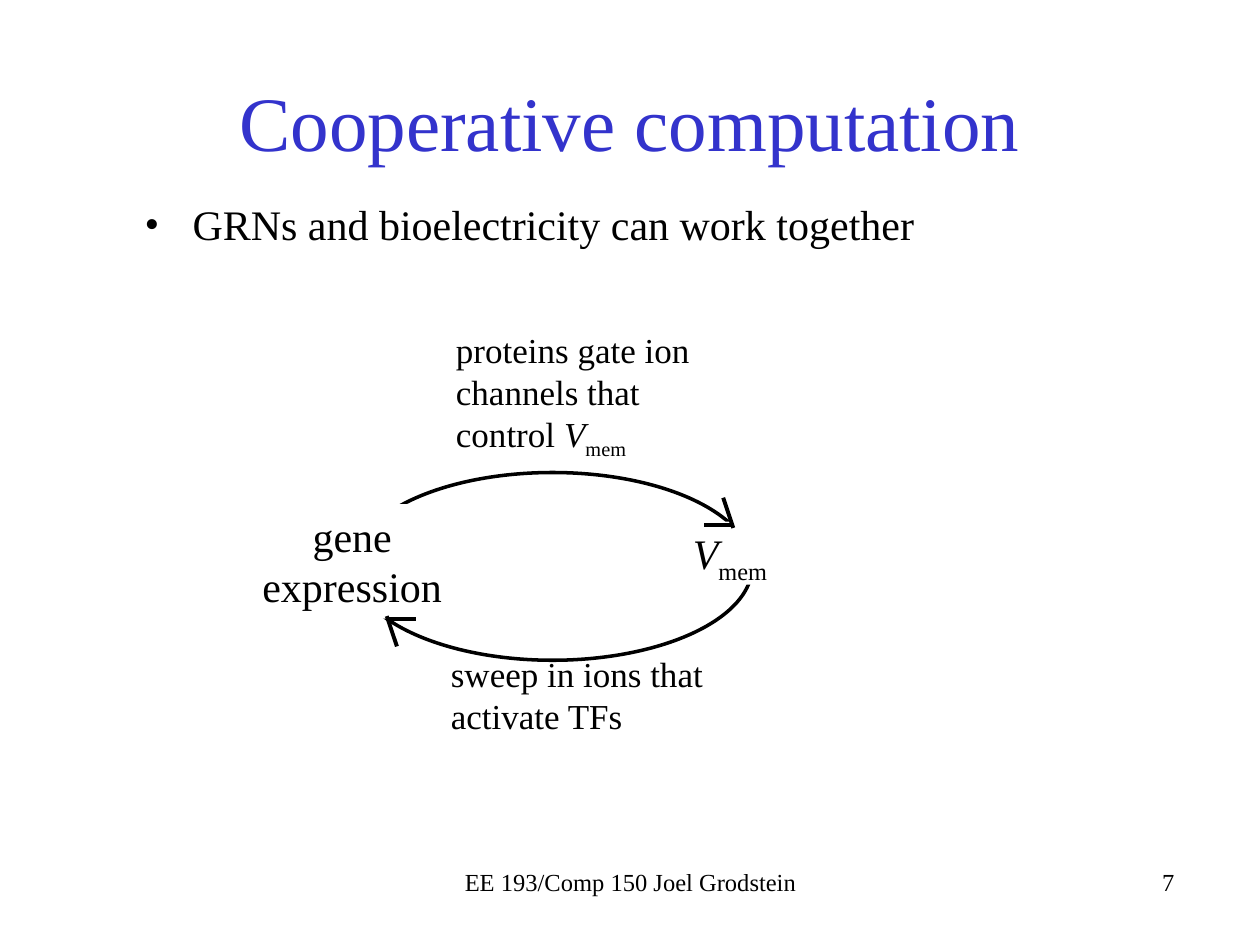
from lxml.etree import SubElement
from pptx import Presentation
from pptx.dml.color import RGBColor
from pptx.enum.shapes import MSO_CONNECTOR, MSO_SHAPE
from pptx.enum.text import MSO_ANCHOR, PP_ALIGN
from pptx.oxml.ns import qn
from pptx.util import Inches, Pt

FONT = "Times New Roman"
COLORS = {"ink": "000000", "title": "3333CC", "paper": "FFFFFF"}
VMEM = [("V", "italic"), ("mem", "sub")]


def color(name):
    return RGBColor.from_string(COLORS[name])


def add_text(slide, box, runs, size=24, ink="ink", align=PP_ALIGN.LEFT,
             anchor=MSO_ANCHOR.TOP, fill=None, bullet=False):
    """Add text given as a string or as (text, style) runs; fill makes it a rectangle."""
    place = [Inches(n) for n in box]
    if fill:
        shape = slide.shapes.add_shape(MSO_SHAPE.RECTANGLE, *place)
        shape.shadow.inherit = False
        shape.fill.solid()
        shape.fill.fore_color.rgb = color(fill)
        shape.line.fill.background()
    else:
        shape = slide.shapes.add_textbox(*place)
    frame = shape.text_frame
    frame.word_wrap = True
    frame.vertical_anchor = anchor
    para = frame.paragraphs[0]
    para.alignment = align
    if bullet:
        props = para._p.get_or_add_pPr()
        props.set("marL", str(Inches(0.38)))
        props.set("indent", str(Inches(-0.38)))
        SubElement(props, qn("a:buFont"), typeface=FONT)
        SubElement(props, qn("a:buChar"), char="•")
    for text, style in [(runs, None)] if isinstance(runs, str) else runs:
        run = para.add_run()
        run.text = text
        run.font.name = FONT
        run.font.size = Pt(size)
        run.font.color.rgb = color(ink)
        run.font.italic = style == "italic"
        if style == "sub":
            run._r.get_or_add_rPr().set("baseline", "-25000")


def add_loop(slide, box):
    loop = slide.shapes.add_shape(MSO_SHAPE.OVAL, *[Inches(n) for n in box])
    loop.shadow.inherit = False
    loop.fill.background()
    loop.line.color.rgb = color("ink")
    loop.line.width = Pt(2)


def add_line(slide, *ends):
    line = slide.shapes.add_connector(MSO_CONNECTOR.STRAIGHT, *[Inches(n) for n in ends])
    line.line.color.rgb = color("ink")
    line.line.width = Pt(2.25)
    SubElement(line._element.spPr, qn("a:effectLst"))


def add_barbs(slide, steep, flat):
    """Draw the two strokes of an arrowhead, each from its left end."""
    x, y = steep
    add_line(slide, x, y, x + 0.08, y + 0.24)
    x, y = flat
    add_line(slide, x, y, x + 0.21, y)


def main():
    deck = Presentation()
    deck.slide_width, deck.slide_height = Inches(10), Inches(7.5)
    slide = deck.slides.add_slide(deck.slide_layouts[6])

    add_text(slide, (6.25, 6.83, 3.17, 0.5), "7", size=14, align=PP_ALIGN.RIGHT)
    add_loop(slide, (2.8, 3.75, 3.17, 1.49))
    add_text(slide, (0.75, 0.33, 8.5, 1.25), "Cooperative computation", size=44,
             ink="title", align=PP_ALIGN.CENTER, anchor=MSO_ANCHOR.MIDDLE)
    add_text(slide, (1.05, 1.53, 8.5, 1.21),
             "GRNs and bioelectricity can work together", bullet=True)
    add_text(slide, (3.42, 6.83, 3.17, 0.5), "EE 193/Comp 150 Joel Grodstein",
             size=14, align=PP_ALIGN.CENTER)

    add_text(slide, (1.89, 4, 1.81, 0.91), "gene expression",
             align=PP_ALIGN.CENTER, fill="paper")
    add_text(slide, (5.4, 4.14, 0.89, 0.5), VMEM, fill="paper")
    add_barbs(slide, steep=(5.74, 3.95), flat=(5.59, 4.17))
    add_barbs(slide, steep=(3.07, 4.89), flat=(3.09, 4.91))

    gate = [("proteins gate ion channels that control ", None)] + VMEM
    add_text(slide, (3.52, 2.56, 2.48, 1.11), gate, size=20)
    add_text(slide, (3.48, 5.13, 2.58, 0.77), "sweep in ions that activate TFs", size=20)
    deck.save("out.pptx")


if __name__ == "__main__":
    main()
